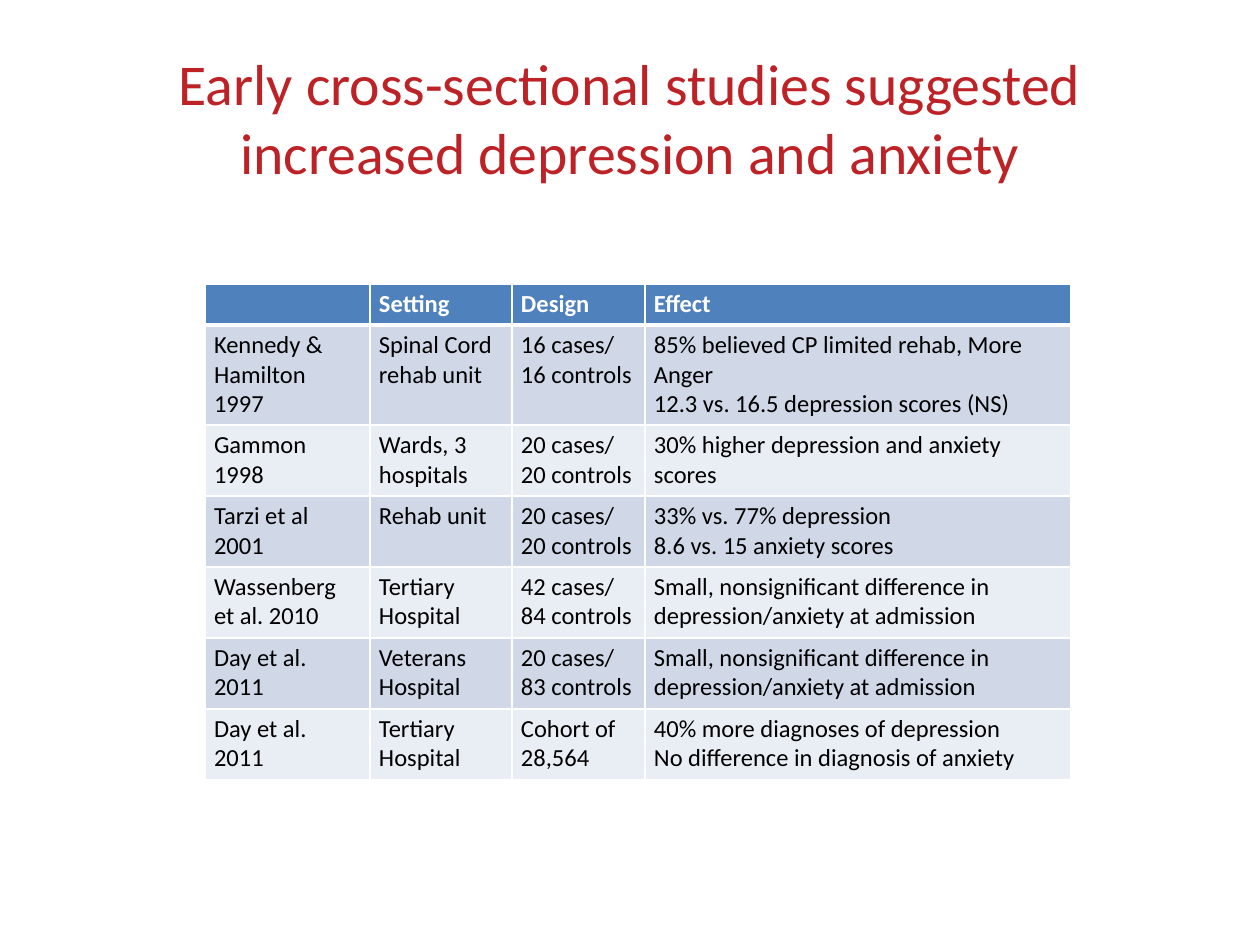
from lxml.etree import SubElement
from pptx import Presentation
from pptx.dml.color import RGBColor
from pptx.enum.text import MSO_ANCHOR, MSO_AUTO_SIZE, PP_ALIGN
from pptx.oxml.ns import qn
from pptx.util import Emu, Pt

PX_PER_INCH = 126
FONT = "Calibri"
COLORS = {
    "title": "BD2226",
    "header": "4F81BD",
    "odd": "D0D8E8",
    "even": "E9EDF4",
    "white": "FFFFFF",
    "text": "000000",
}

COLUMN_WIDTHS = [165, 142, 133, 426]
ROW_HEIGHTS = [41, 100] + [71] * 5
STUDIES = [
    ["", "Setting", "Design", "Effect"],
    ["Kennedy & Hamilton 1997", "Spinal Cord rehab unit", "16 cases/ 16 controls",
     "85% believed CP limited rehab, More Anger\n12.3 vs. 16.5 depression scores (NS)"],
    ["Gammon 1998", "Wards, 3 hospitals", "20 cases/ 20 controls",
     "30% higher depression and anxiety scores"],
    ["Tarzi et al 2001", "Rehab unit", "20 cases/ 20 controls",
     "33% vs. 77% depression\n8.6 vs. 15 anxiety scores"],
    ["Wassenberg et al. 2010", "Tertiary Hospital", "42 cases/ 84 controls",
     "Small, nonsignificant difference in depression/anxiety at admission"],
    ["Day et al. 2011", "Veterans Hospital", "20 cases/ 83 controls",
     "Small, nonsignificant difference in depression/anxiety at admission"],
    ["Day et al. 2011", "Tertiary Hospital", "Cohort of\n28,564",
     "40% more diagnoses of depression\nNo difference in diagnosis of anxiety"],
]


def px(length):
    return Emu(round(length * 914400 / PX_PER_INCH))


def color(name):
    return RGBColor.from_string(COLORS[name])


def set_font(paragraph, size, color_name, bold=False):
    font = paragraph.font
    font.name, font.size, font.bold = FONT, Pt(size), bold
    font.color.rgb = color(color_name)


def set_borders(cell, widths):
    """Draw white cell borders; widths maps each side to points."""
    properties = cell._tc.get_or_add_tcPr()
    for position, (side, width) in enumerate(widths.items()):
        line = SubElement(properties, qn(f"a:ln{side}"), w=str(Pt(width)))
        fill = SubElement(line, qn("a:solidFill"))
        SubElement(fill, qn("a:srgbClr"), val=COLORS["white"])
        properties.insert(position, line)  # borders come before the fill


def add_title(slide, text, left, top, width, height):
    title = slide.shapes.title
    title.left, title.top = px(left), px(top)
    title.width, title.height = px(width), px(height)
    frame = title.text_frame
    frame.text = text
    frame.word_wrap = True
    frame.auto_size = MSO_AUTO_SIZE.NONE
    frame.vertical_anchor = MSO_ANCHOR.MIDDLE
    frame.paragraphs[0].alignment = PP_ALIGN.CENTER
    set_font(frame.paragraphs[0], 33, "title")


def format_cell(cell, text, row):
    header = row == 0
    cell.text = text
    cell.margin_left = cell.margin_right = px(9)
    cell.margin_top = cell.margin_bottom = px(5)
    cell.fill.solid()
    cell.fill.fore_color.rgb = color("header" if header else "odd" if row % 2 else "even")
    set_borders(cell, {"L": 1, "R": 1, "T": 3 if row == 1 else 1, "B": 3 if header else 1})
    for paragraph in cell.text_frame.paragraphs:
        set_font(paragraph, 14, "white" if header else "text", bold=header)
        if not text:  # keeps the empty cell as low as its row
            SubElement(paragraph._p, qn("a:endParaRPr"), sz="1400")


def add_study_table(slide, left, top):
    table = slide.shapes.add_table(
        len(STUDIES), len(COLUMN_WIDTHS), px(left), px(top),
        px(sum(COLUMN_WIDTHS)), px(sum(ROW_HEIGHTS))).table
    for column, width in zip(table.columns, COLUMN_WIDTHS):
        column.width = px(width)
    for row, (height, texts) in enumerate(zip(ROW_HEIGHTS, STUDIES)):
        table.rows[row].height = px(height)
        for column, text in enumerate(texts):
            format_cell(table.cell(row, column), text, row)


def main():
    presentation = Presentation()
    presentation.slide_width, presentation.slide_height = px(1260), px(945)
    slide = presentation.slides.add_slide(presentation.slide_layouts[5])

    # Title
    add_title(slide, "Early cross-sectional studies suggested increased depression and anxiety",
              63, 38, 1134, 158)
    # Table of studies
    add_study_table(slide, 205, 284)

    presentation.save("out.pptx")


if __name__ == "__main__":
    main()
